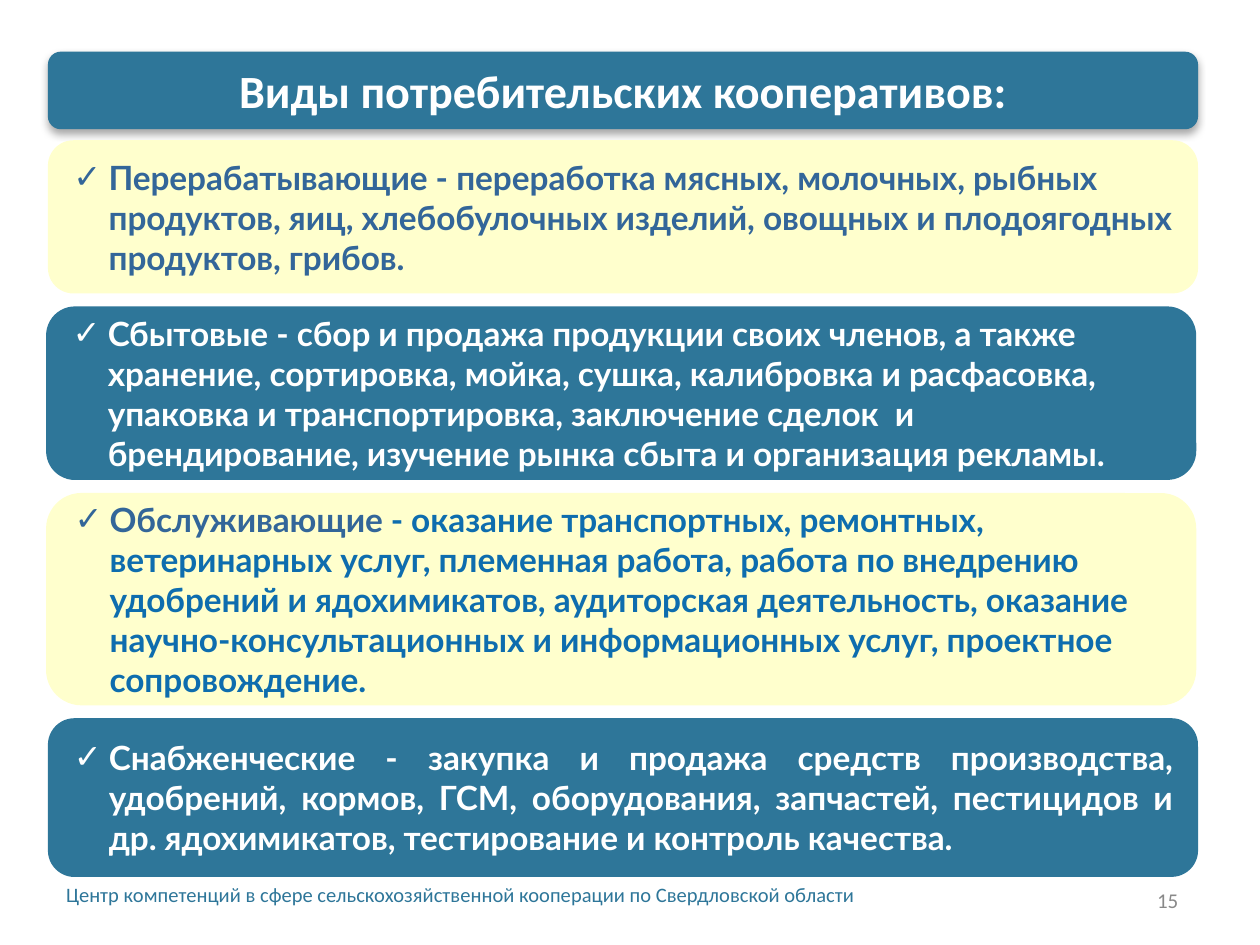
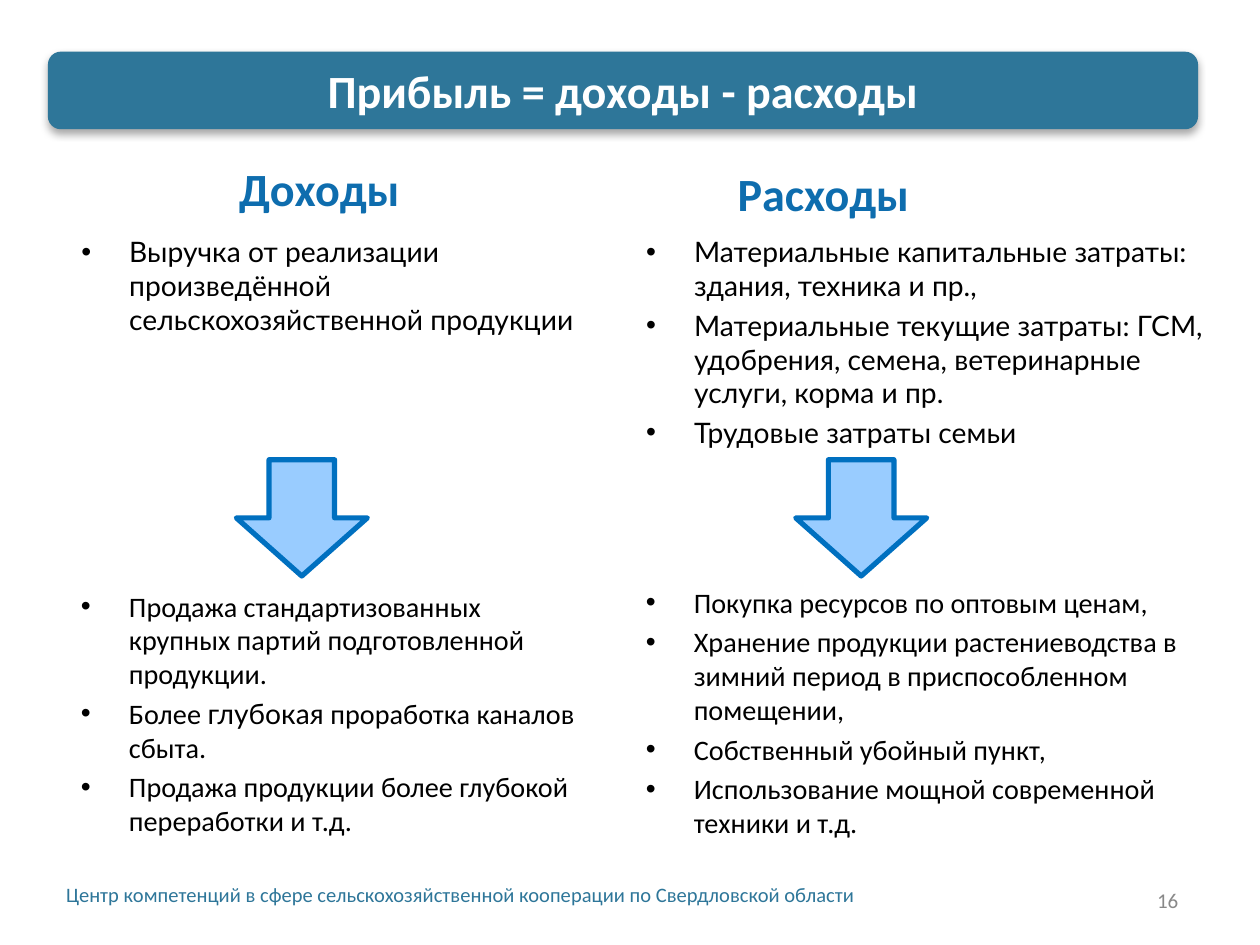
from dataclasses import dataclass

from lxml import etree
from pptx import Presentation
from pptx import util as u
from pptx.dml import color as c
from pptx.enum import shapes, text
from pptx.oxml import ns

TEAL, CREAM, WHITE, BLACK = "2E7699", "FFFFCD", "FFFFFF", "000000"
SLATE, BLUE, GRAY = "336699", "0E6DAE", "898989"
ARROW_FILL, ARROW_LINE = "99CCFF", "0070C0"
FOOTER = "Центр компетенций в сфере сельскохозяйственной кооперации по Свердловской области"

SLIDE_WIDTH, SLIDE_HEIGHT = u.Emu(6240463), u.Emu(4679950)
MARGIN, CONTENT_WIDTH = 0.26, 6.23
PANEL_TOP, PANEL_GAP = 0.76, 0.07
TITLE_ONLY, TWO_CONTENT = 5, 3


@dataclass(frozen=True)
class Area:
    left: float
    top: float
    width: float
    height: float

    def lengths(self) -> tuple:
        return tuple(u.Inches(v) for v in (self.left, self.top, self.width, self.height))


@dataclass(frozen=True)
class Style:
    size: float
    color: str
    font: str = "Calibri"
    bold: bool = False
    align: text.PP_ALIGN = text.PP_ALIGN.LEFT
    bullet: str = ""
    indent: float = 0
    space_before: float = 0


@dataclass(frozen=True)
class Span:
    """Part of a paragraph that may depart from the paragraph's font or colour."""
    text: str
    color: str = ""
    font: str = ""


@dataclass(frozen=True)
class Panel:
    left: float
    height: float
    fill: str
    color: str
    spans: tuple[Span, ...]
    align: text.PP_ALIGN = text.PP_ALIGN.LEFT


@dataclass(frozen=True)
class Column:
    heading: str
    heading_area: Area
    items: tuple[str, ...]
    items_area: Area
    results: tuple
    results_area: Area
    arrow_left: float


TITLE = Style(18, WHITE, bold=True, align=text.PP_ALIGN.CENTER)
HEADING = Style(18, BLUE, bold=True, align=text.PP_ALIGN.CENTER, space_before=3.6)
FOOTNOTE = Style(8, TEAL)
PAGE_NUMBER = Style(8.2, GRAY, align=text.PP_ALIGN.RIGHT)
ITEMS = Style(11, BLACK, "Lato", bullet="•", indent=0.26, space_before=2.2)
RESULTS = Style(11, BLACK, bullet="•", indent=0.26, space_before=2.2)

PANELS = (
    Panel(0.26, 0.83, CREAM, SLATE, (Span(
        "Перерабатывающие - переработка мясных, молочных, рыбных продуктов, яиц, "
        "хлебобулочных изделий, овощных и плодоягодных продуктов, грибов."),)),
    Panel(0.25, 0.94, TEAL, WHITE, (Span(
        "Сбытовые - сбор и продажа продукции своих членов, а также хранение, "
        "сортировка, мойка, сушка, калибровка и расфасовка, упаковка и "
        "транспортировка, заключение сделок  и брендирование, изучение рынка "
        "сбыта и организация рекламы."),)),
    Panel(0.25, 1.15, CREAM, SLATE, (
        Span("Обслуживающие "),
        Span("- оказание транспортных, ремонтных, ветеринарных услуг, племенная "
             "работа, работа по внедрению удобрений и ядохимикатов, аудиторская "
             "деятельность, оказание научно-консультационных и информационных "
             "услуг, проектное сопровождение.", color=BLUE))),
    Panel(0.26, 0.86, TEAL, WHITE, (Span(
        "Снабженческие - закупка и продажа средств производства, удобрений, кормов, "
        "ГСМ, оборудования, запчастей, пестицидов и др. ядохимикатов, тестирование "
        "и контроль качества."),), text.PP_ALIGN.JUSTIFY),
)

COLUMNS = (
    Column(
        "Доходы", Area(1.06, 0.76, 1.34, 0.52),
        ("Выручка от реализации произведённой сельскохозяйственной продукции",),
        Area(0.34, 1.22, 2.89, 1.02),
        ("Продажа стандартизованных крупных партий подготовленной продукции.",
         (Span("Более "), Span("глубокая", font="Lato"), Span(" проработка каналов сбыта.")),
         "Продажа продукции более глубокой переработки и т.д."),
        Area(0.34, 3.14, 2.89, 1.47), 1.28),
    Column(
        "Расходы", Area(3.81, 0.77, 1.3, 0.55),
        ("Материальные капитальные затраты: здания, техника и пр.,",
         "Материальные текущие затраты: ГСМ, удобрения, семена, ветеринарные "
         "услуги, корма и пр.",
         "Трудовые затраты семьи"),
        Area(3.4, 1.22, 3.24, 1.65),
        ("Покупка ресурсов по оптовым ценам,",
         "Хранение продукции растениеводства в зимний период в приспособленном помещении,",
         "Собственный убойный пункт,",
         "Использование мощной современной техники и т.д."),
        Area(3.4, 3.12, 3.24, 1.51), 4.31),
)


def rgb(value: str) -> c.RGBColor:
    return c.RGBColor.from_string(value)


def add_bullet(paragraph, style: Style) -> None:
    properties = paragraph._p.get_or_add_pPr()
    indent = u.Inches(style.indent)
    properties.set("marL", str(indent))
    properties.set("indent", str(-indent))
    etree.SubElement(properties, ns.qn("a:buFont"), typeface="Arial")
    etree.SubElement(properties, ns.qn("a:buChar"), char=style.bullet)


def write(shape, paragraphs, style: Style, anchor=text.MSO_ANCHOR.TOP) -> None:
    """Fill a shape with paragraphs, each a string or a tuple of spans."""
    frame = shape.text_frame
    frame.word_wrap = True
    frame.auto_size = text.MSO_AUTO_SIZE.NONE
    frame.vertical_anchor = anchor
    for index, content in enumerate(paragraphs):
        para = frame.add_paragraph() if index else frame.paragraphs[0]
        if style.bullet:
            add_bullet(para, style)
        para.alignment = style.align
        para.space_before = u.Pt(style.space_before)
        para.font.size = u.Pt(style.size)
        para.font.name = style.font
        para.font.bold = style.bold
        para.font.color.rgb = rgb(style.color)
        for span in (Span(content),) if isinstance(content, str) else content:
            run = para.add_run()
            run.text = span.text
            if span.color:
                run.font.color.rgb = rgb(span.color)
            if span.font:
                run.font.name = span.font


def place(shape, area: Area) -> None:
    shape.left, shape.top, shape.width, shape.height = area.lengths()


def add_text(page, area: Area, paragraphs, style: Style, anchor=text.MSO_ANCHOR.TOP) -> None:
    write(page.shapes.add_textbox(*area.lengths()), paragraphs, style, anchor)


def add_filled(page, kind: shapes.MSO_SHAPE, area: Area, fill: str):
    shape = page.shapes.add_shape(kind, *area.lengths())
    shape.shadow.inherit = False
    shape.fill.solid()
    shape.fill.fore_color.rgb = rgb(fill)
    shape.line.fill.background()
    return shape


def add_drop_shadow(shape) -> None:
    effects = shape.element.spPr.find(ns.qn("a:effectLst"))
    shadow = etree.SubElement(
        effects, ns.qn("a:outerShdw"), blurRad=str(u.Pt(3.1)), dist=str(u.Pt(1.8)),
        dir="5400000", algn="t", rotWithShape="0")
    tint = etree.SubElement(shadow, ns.qn("a:srgbClr"), val=BLACK)
    etree.SubElement(tint, ns.qn("a:alpha"), val="35000")


def add_page(deck, layout: int, title: str, number: int):
    """Add a slide with the shared title band, footer and page number."""
    page = deck.slides.add_slide(deck.slide_layouts[layout])
    middle = text.MSO_ANCHOR.MIDDLE
    band_area = Area(MARGIN, 0.28, CONTENT_WIDTH, 0.42)
    band = add_filled(page, shapes.MSO_SHAPE.ROUNDED_RECTANGLE, band_area, TEAL)
    add_drop_shadow(band)
    heading = page.shapes.title
    heading.element.addprevious(band.element)
    place(heading, band_area)
    write(heading, [title], TITLE, middle)
    add_text(page, Area(MARGIN, 4.73, CONTENT_WIDTH, 0.23), [FOOTER], FOOTNOTE)
    add_text(page, Area(4.89, 4.74, 1.59, 0.27), [str(number)], PAGE_NUMBER, middle)
    return page


def build_kinds(deck) -> None:
    page = add_page(deck, TITLE_ONLY, "Виды потребительских кооперативов:", 15)
    top = PANEL_TOP
    for panel in PANELS:
        box = add_filled(page, shapes.MSO_SHAPE.ROUNDED_RECTANGLE,
                         Area(panel.left, top, CONTENT_WIDTH, panel.height), panel.fill)
        box.text_frame.margin_top = box.text_frame.margin_bottom = 0
        style = Style(13, panel.color, "Lato", True, panel.align, "✓", 0.19)
        write(box, [panel.spans], style, text.MSO_ANCHOR.MIDDLE)
        top += panel.height + PANEL_GAP


def build_profit(deck) -> None:
    page = add_page(deck, TWO_CONTENT, "Прибыль = доходы - расходы", 16)
    for index, column in enumerate(COLUMNS, start=1):
        add_text(page, column.heading_area, [column.heading], HEADING, text.MSO_ANCHOR.MIDDLE)
        body = page.placeholders[index]
        place(body, column.items_area)
        write(body, column.items, ITEMS)
        add_text(page, column.results_area, column.results, RESULTS)
        arrow = add_filled(page, shapes.MSO_SHAPE.DOWN_ARROW,
                           Area(column.arrow_left, 2.49, 0.71, 0.63), ARROW_FILL)
        arrow.line.color.rgb = rgb(ARROW_LINE)
        arrow.line.width = u.Pt(2)


def main() -> None:
    deck = Presentation()
    deck.slide_width, deck.slide_height = SLIDE_WIDTH, SLIDE_HEIGHT
    build_kinds(deck)
    build_profit(deck)
    deck.save("out.pptx")


if __name__ == "__main__":
    main()
